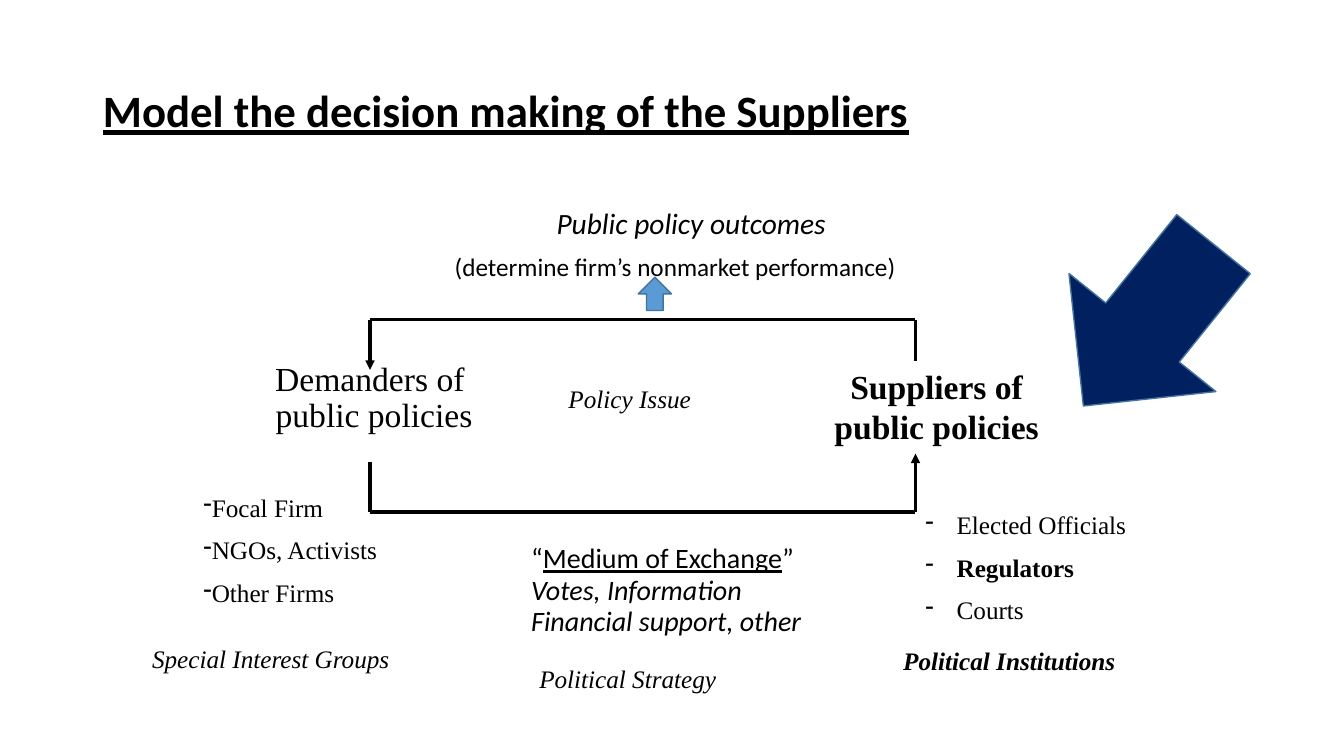
from pptx import Presentation
from pptx.dml.color import RGBColor
from pptx.enum.shapes import MSO_CONNECTOR, MSO_SHAPE
from pptx.enum.text import MSO_ANCHOR, MSO_AUTO_SIZE, PP_ALIGN
from pptx.oxml.ns import qn
from pptx.util import Inches, Pt
from lxml.etree import SubElement

BLACK = RGBColor(0x00, 0x00, 0x00)
BLUE = RGBColor(0x5B, 0x9B, 0xD5)
NAVY = RGBColor(0x00, 0x20, 0x60)
EDGE = RGBColor(0x43, 0x73, 0x9E)
SANS, SERIF = "Calibri", "Times New Roman"

# A paragraph is a list of (text, styles); styles: b bold, i italic, u underline
TITLE = [[("Model the decision making of the Suppliers", "bu")]]
OUTCOMES = [
    ([("Public policy outcomes", "i")], 21, 2.26),
    ([("(determine firm’s nonmarket performance)", "")], 18, 1.25),
]
HEADINGS = [
    ((2.42, 3.67, 2.58, 0.71), [[("Demanders of ", "")], [("public policies", "")]], 0.5),
    ((8.08, 3.58, 2.42, 0.91), [[("Suppliers of public policies", "b")]], 1.0),
]
EXCHANGE = [
    [("“", ""), ("Medium of Exchange", "u"), ("”", "")],
    [("Votes, Information", "i")],
    [("Financial support, other", "i")],
]
MEMBERS = [
    ((1.92, 4.83, 1.97, 1.31), 0,
     [[("Focal Firm", "")], [("NGOs, Activists", "")], [("Other Firms", "")]]),
    ((9.08, 5, 2.33, 1.31), 0.31,
     [[("Elected Officials", "")], [("Regulators", "b")], [("Courts", "")]]),
]
CAPTIONS = [
    ((1.41, 6.33, 2.84, 0.4), "Special Interest Groups", "i"),
    ((5.54, 3.75, 1.54, 0.4), "Policy Issue", "i"),
    ((8.86, 6.35, 2.98, 0.4), "Political Institutions", "bi"),
    ((5.25, 6.53, 2.98, 0.4), "Political Strategy", "i"),
]
# Each route ends in an arrowhead
DEMAND_X, SUPPLY_X = 3.67, 9.08
ROUTES = [
    [(SUPPLY_X, 3.58), (SUPPLY_X, 3.17), (DEMAND_X, 3.17), (DEMAND_X, 3.67)],
    [(DEMAND_X, 4.58), (DEMAND_X, 5.08), (SUPPLY_X, 5.08), (SUPPLY_X, 4.5)],
]
ARROWS = [
    (MSO_SHAPE.DOWN_ARROW, (6.33, 2.75, 0.33, 0.33), 180, BLUE),
    (MSO_SHAPE.RIGHT_ARROW, (10.36, 2.29, 2.06, 1.87), 128.8, NAVY),
]


def lengths(values):
    return [Inches(value) for value in values]


def write(para, spans, size=18, font=SERIF, align=PP_ALIGN.LEFT, spacing=1.0,
          before=None, bullet=None, indent=0, hang=0):
    """Fill a paragraph; before is a share of the line height."""
    para.alignment = align
    para.line_spacing = spacing
    props = para._p.get_or_add_pPr()
    props.set("marL", str(Inches(indent)))
    props.set("indent", str(-Inches(hang)))
    if before:
        gap = SubElement(props, qn("a:spcBef"))
        SubElement(gap, qn("a:spcPct")).set("val", str(int(before * 100000)))
    if bullet:
        SubElement(props, qn("a:buChar")).set("char", bullet)
    else:
        SubElement(props, qn("a:buNone"))
    for text, styles in spans:
        span = para.add_run()
        span.text = text
        span.font.name, span.font.size = font, Pt(size)
        span.font.color.rgb = BLACK
        span.font.bold = "b" in styles
        span.font.italic = "i" in styles
        span.font.underline = "u" in styles


def fill_frame(frame, paragraphs, **formats):
    frame.word_wrap = True
    for index, spans in enumerate(paragraphs):
        para = frame.add_paragraph() if index else frame.paragraphs[0]
        write(para, spans, **formats)


def add_text(page, place, paragraphs, **formats):
    box = page.shapes.add_textbox(*lengths(place))
    fill_frame(box.text_frame, paragraphs, **formats)


def move(box, place, anchor):
    box.left, box.top, box.width, box.height = lengths(place)
    box.text_frame.auto_size = MSO_AUTO_SIZE.NONE
    box.text_frame.vertical_anchor = anchor


def add_route(page, points):
    for start, end in zip(points, points[1:]):
        line = page.shapes.add_connector(MSO_CONNECTOR.STRAIGHT, *lengths(start + end))
        line.line.color.rgb = BLACK
        line.line.width = Pt(2.25)
        SubElement(line._element.spPr, qn("a:effectLst"))
    SubElement(line.line._get_or_add_ln(), qn("a:tailEnd")).set("type", "triangle")


def add_arrow(page, kind, place, angle, color):
    arrow = page.shapes.add_shape(kind, *lengths(place))
    arrow.rotation = angle
    arrow.shadow.inherit = False
    arrow.fill.solid()
    arrow.fill.fore_color.rgb = color
    arrow.line.color.rgb = EDGE
    arrow.line.width = Pt(1)


def main():
    deck = Presentation()
    deck.slide_width, deck.slide_height = lengths((13.33, 7.5))
    page = deck.slides.add_slide(deck.slide_layouts[1])
    title, body = page.placeholders

    move(title, (0.92, 0.4, 11.5, 1.45), MSO_ANCHOR.MIDDLE)
    fill_frame(title.text_frame, TITLE, size=32, font=SANS, spacing=0.9)

    move(body, (3.16, 2.02, 7.42, 1), MSO_ANCHOR.TOP)
    body.text_frame.word_wrap = True
    for index, (spans, size, indent) in enumerate(OUTCOMES):
        para = body.text_frame.add_paragraph() if index else body.text_frame.paragraphs[0]
        write(para, spans, size=size, font=SANS, spacing=0.9, indent=indent)
        para.space_before = Pt(10)

    for place, paragraphs, spacing in HEADINGS:
        add_text(page, place, paragraphs, size=24, align=PP_ALIGN.CENTER,
                 spacing=spacing, before=0.5)
    for points in ROUTES:
        add_route(page, points)
    add_text(page, (5.17, 5.5, 3.17, 0.93), EXCHANGE, size=20, font=SANS,
             spacing=0.35, before=0.7)
    for place, hang, paragraphs in MEMBERS:
        add_text(page, place, paragraphs, before=0.5, bullet="-", indent=hang, hang=hang)
    for place, text, styles in CAPTIONS:
        add_text(page, place, [[(text, styles)]], before=0.5)
    for kind, place, angle, color in ARROWS:
        add_arrow(page, kind, place, angle, color)

    deck.save("out.pptx")


if __name__ == "__main__":
    main()
